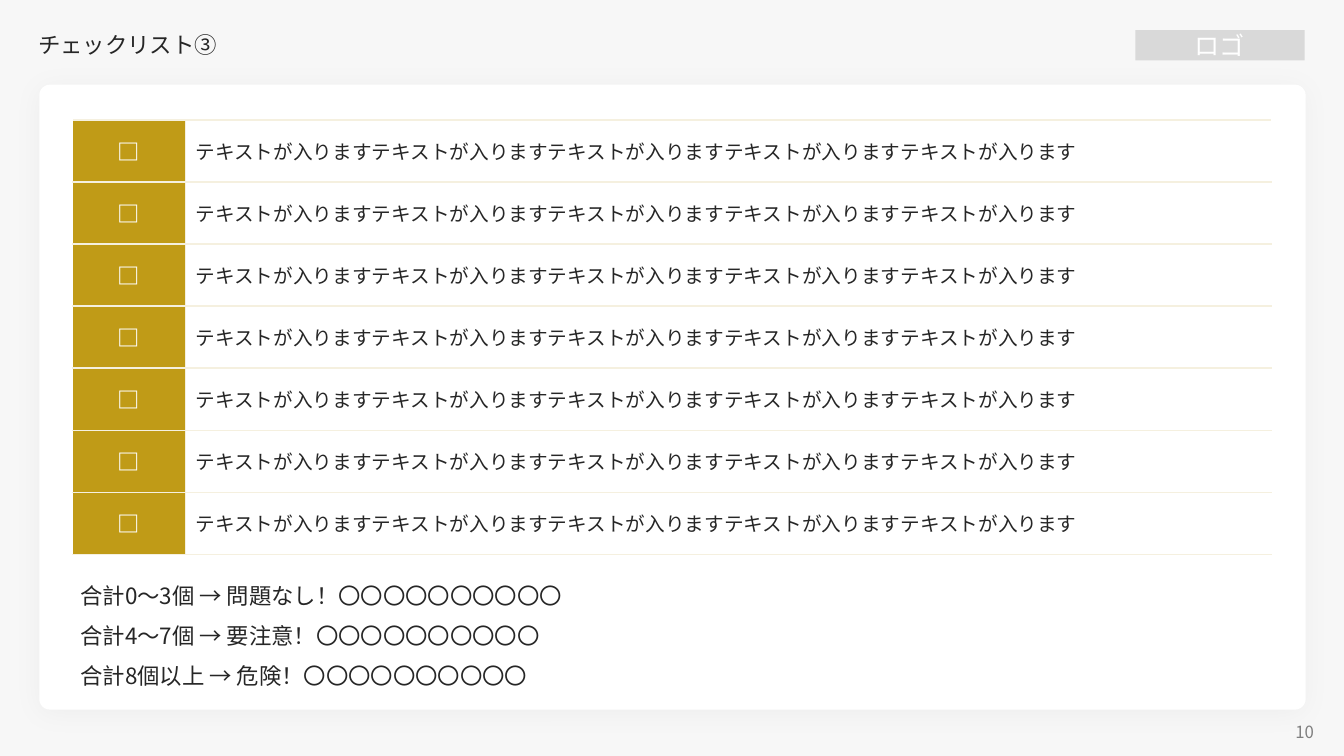
import pptx
import pptx.util
import pptx.dml.color
import pptx.enum.shapes
import pptx.enum.text
import pptx.oxml
import pptx.oxml.ns

Inches = pptx.util.Inches
Pt = pptx.util.Pt
Shape = pptx.enum.shapes.MSO_SHAPE
Align = pptx.enum.text.PP_ALIGN
Anchor = pptx.enum.text.MSO_ANCHOR
FONT = "Noto Sans CJK JP"
NS = pptx.oxml.ns.nsdecls("a")
COLORS = {"back": "F7F7F7", "white": "FFFFFF", "logo": "D9D9D9", "ink": "262626",
          "page": "808080", "gold": "C09B17", "rule": "F5F0DF", "shade": "000000"}
ITEMS = ["テキストが入ります" * 5] * 7
SCORES = ["合計0〜3個 → 問題なし！〇〇〇〇〇〇〇〇〇〇",
          "合計4〜7個 → 要注意！〇〇〇〇〇〇〇〇〇〇",
          "合計8個以上 → 危険！〇〇〇〇〇〇〇〇〇〇"]


def color(name):
    """Return the named colour."""
    return pptx.dml.color.RGBColor.from_string(COLORS[name])


def write(frame, lines, size, tint, align=Align.LEFT, space=None, bold=False):
    """Write one paragraph per line into a text frame."""
    for row, line in enumerate(lines):
        para = frame.add_paragraph() if row else frame.paragraphs[0]
        para.alignment = align
        para.line_spacing = space
        run = para.add_run()
        run.text = line
        run.font.size = Pt(size)
        run.font.bold = bold
        run.font.name = FONT
        run.font.color.rgb = color(tint)
        run.font._element.append(
            pptx.oxml.parse_xml(f'<a:ea {NS} typeface="{FONT}"/>'))


def panel(slide, box, kind, tint, bend=None):
    """Add a filled shape without outline or shadow."""
    shape = slide.shapes.add_shape(kind, *map(Inches, box))
    shape.shadow.inherit = False
    shape.fill.solid()
    shape.fill.fore_color.rgb = color(tint)
    shape.line.fill.background()
    if bend is not None:
        shape.adjustments[0] = bend
    return shape


def label(slide, box, lines, size, tint, anchor=Anchor.MIDDLE, **style):
    """Add a wrapping text box."""
    frame = slide.shapes.add_textbox(*map(Inches, box)).text_frame
    frame.word_wrap = True
    frame.vertical_anchor = anchor
    write(frame, lines, size, tint, **style)


def card(slide, box):
    """Add the white card with its soft shadow."""
    shape = panel(slide, box, Shape.ROUNDED_RECTANGLE, "white", 0.017)
    effect = shape._element.spPr.find(pptx.oxml.ns.qn("a:effectLst"))
    effect.append(pptx.oxml.parse_xml(
        f'<a:outerShdw {NS} blurRad="{Pt(20)}" dist="{Pt(3)}" dir="5400000" '
        f'algn="t" rotWithShape="0"><a:srgbClr val="{COLORS["shade"]}">'
        '<a:alpha val="3000"/></a:srgbClr></a:outerShdw>'))


def header(slide, box):
    """Add the title at the left and the logo block at the right."""
    left, top, width, height = box
    label(slide, (left, top, 10, height), ["チェックリスト③"], 16, "ink", space=0.9)
    logo = panel(slide, (left + width - 1.68, top + 0.05, 1.68, 0.3),
                 Shape.RECTANGLE, "logo")
    logo.text_frame.vertical_anchor = Anchor.MIDDLE
    write(logo.text_frame, ["ロゴ"], 18, "white", Align.CENTER)


def border(cell, sides):
    """Draw one-point borders, given as pairs of side and colour."""
    props = cell._tc.get_or_add_tcPr()
    for spot, (side, tint) in enumerate(sides):
        props.insert(spot, pptx.oxml.parse_xml(
            f'<a:ln{side} {NS} w="{Pt(1)}"><a:solidFill>'
            f'<a:srgbClr val="{COLORS[tint]}"/></a:solidFill></a:ln{side}>'))


def fill(cell, text, size, tint, ground, sides, **style):
    """Fill one table cell with its text, ground and borders."""
    cell.vertical_anchor = Anchor.MIDDLE
    cell.fill.solid()
    cell.fill.fore_color.rgb = color(ground)
    write(cell.text_frame, [text], size, tint, **style)
    border(cell, sides)


def checks(slide, box):
    """Add the checklist table."""
    table = slide.shapes.add_table(len(ITEMS), 2, *map(Inches, box)).table
    table.first_row = table.horz_banding = False
    table.columns[0].width = Inches(1.12)
    table.columns[1].width = Inches(box[2] - 1.12)
    ends = [("T", "rule"), ("B", "rule")]
    for row, item in enumerate(ITEMS):
        table.rows[row].height = Inches(box[3] / len(ITEMS))
        fill(table.cell(row, 0), "□", 16, "white", "gold",
             [("L", "white"), ("R", "rule")] + ends,
             align=Align.CENTER, bold=True)
        fill(table.cell(row, 1), item, 14, "ink", "white", [("L", "rule")] + ends)


def main():
    """Build and save the slide."""
    deck = pptx.Presentation()
    deck.slide_width, deck.slide_height = Inches(13.33), Inches(7.5)
    slide = deck.slides.add_slide(deck.slide_layouts[6])
    panel(slide, (0, 0, 13.33, 7.5), Shape.ROUNDED_RECTANGLE, "back", 0)
    card(slide, (0.39, 0.84, 12.56, 6.2))
    label(slide, (10.02, 7.14, 3.11, 0.24), ["10"], 12, "page", align=Align.RIGHT)
    header(slide, (0.28, 0.25, 12.66, 0.41))
    checks(slide, (0.72, 1.19, 11.89, 4.31))
    label(slide, (0.7, 5.59, 9.16, 1.28), SCORES, 16, "ink", Anchor.TOP, space=1.5)
    deck.save("out.pptx")


if __name__ == "__main__":
    main()
